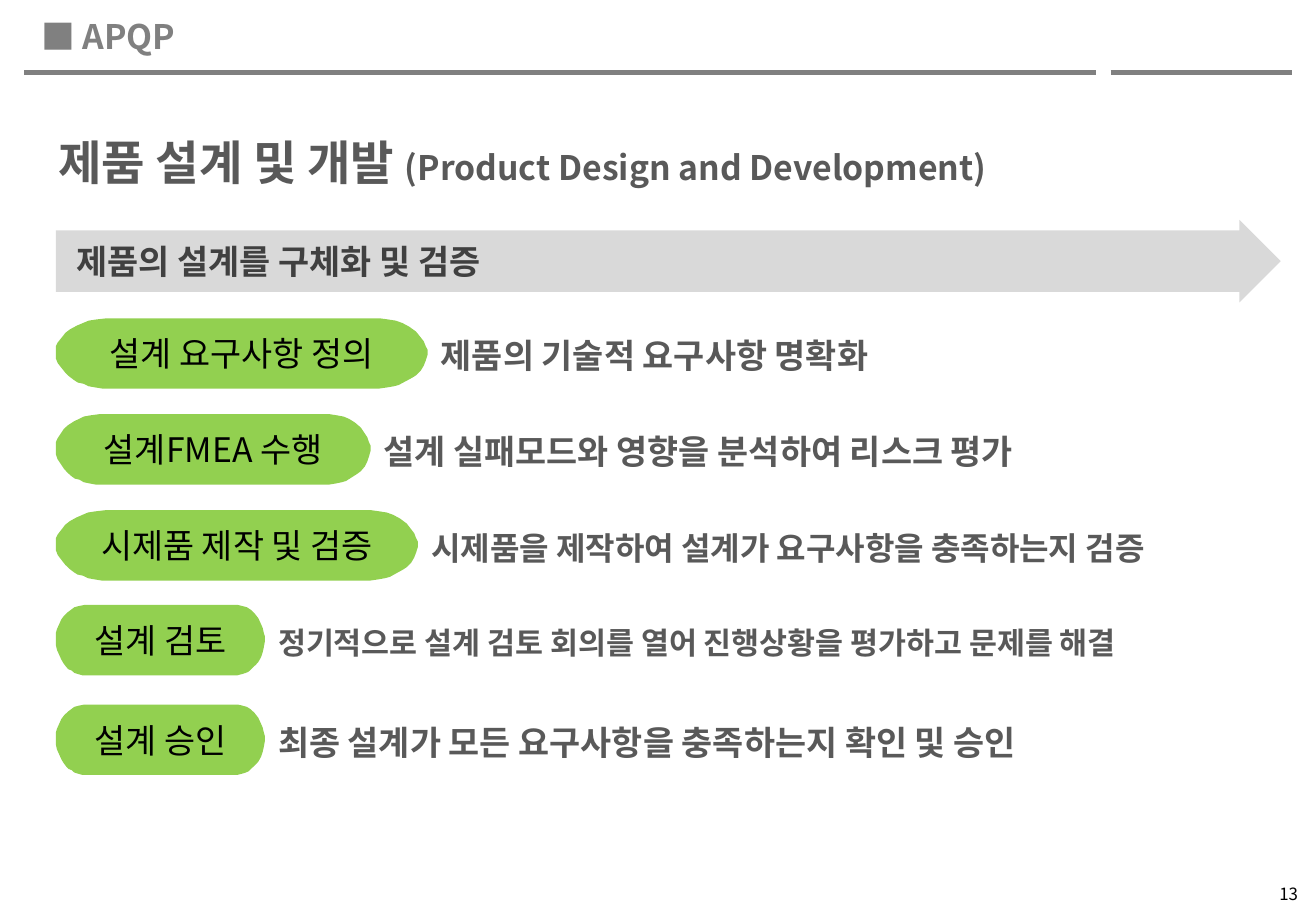
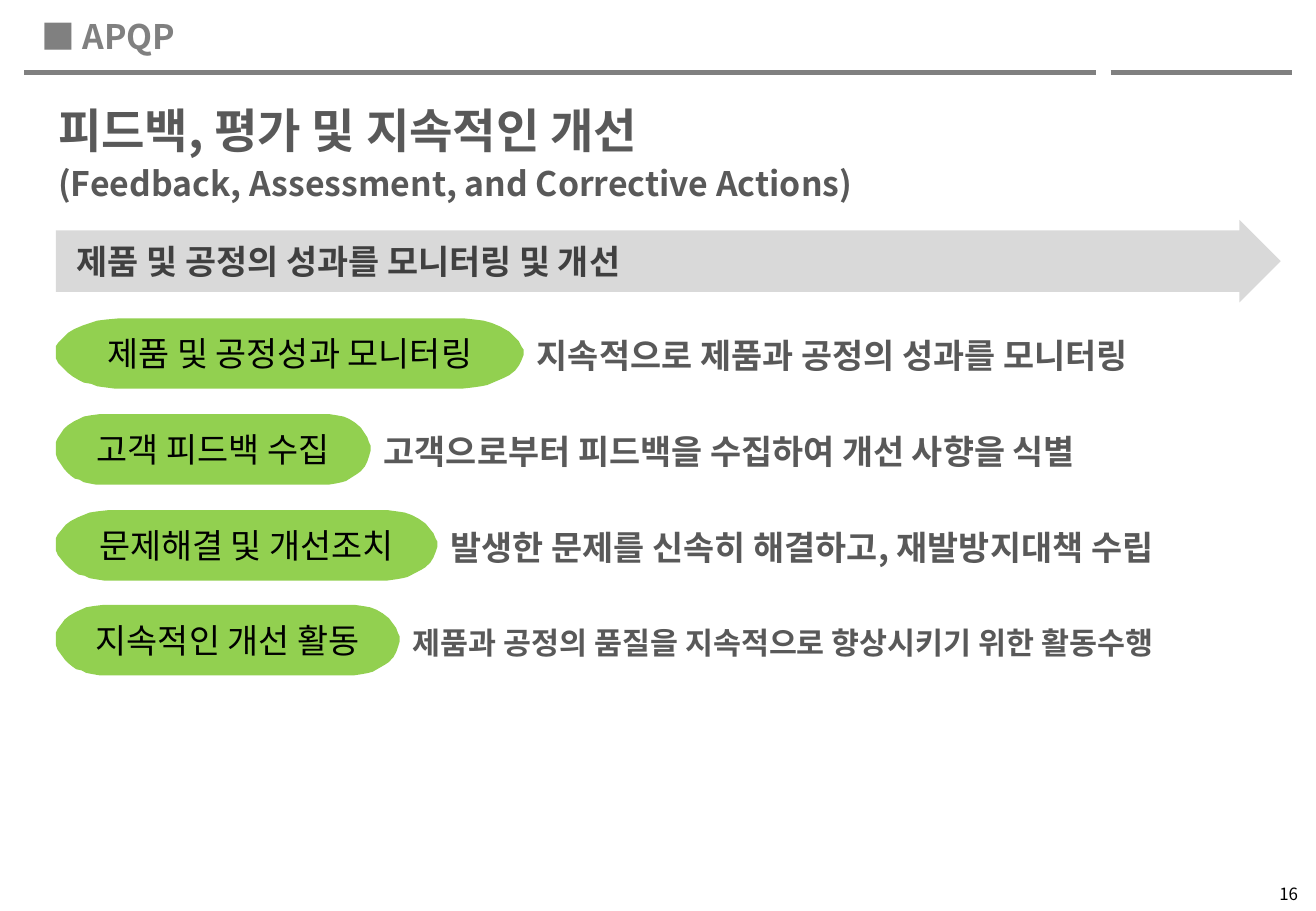
from lxml.etree import SubElement
from pptx import Presentation
from pptx.dml.color import RGBColor
from pptx.enum.shapes import MSO_CONNECTOR, MSO_SHAPE
from pptx.enum.text import MSO_ANCHOR, PP_ALIGN
from pptx.oxml.ns import qn
from pptx.util import Pt

RECT, ARROW = MSO_SHAPE.RECTANGLE, MSO_SHAPE.RIGHT_ARROW
LINE = MSO_CONNECTOR.STRAIGHT
TOP, MID = MSO_ANCHOR.TOP, MSO_ANCHOR.MIDDLE
LEFT, MIDDLE, RIGHT = PP_ALIGN.LEFT, PP_ALIGN.CENTER, PP_ALIGN.RIGHT

PX = 9144
COLORS = {
    "white": "FFFFFF", "black": "000000", "gray": "808080",
    "band": "D9D9D9", "dark": "404040", "text": "595959", "green": "92D050",
}
KR, JP = "Noto Sans CJK KR", "Noto Sans CJK JP"

PILL_W, PILL_H = 385, 58
PILL = [
    (53, 0), (335, 0), (344, 1), (352, 2), (359, 4), (366, 7), (373, 11),
    (377, 15), (381, 19), (383, 23), (385, 26), (385, 30), (383, 35),
    (381, 39), (378, 43), (373, 47), (369, 49), (362, 52), (355, 55),
    (350, 56), (343, 57), (334, 58), (49, 58), (41, 57), (34, 56),
    (29, 54), (23, 53), (19, 51), (14, 48), (10, 45), (6, 41), (2, 37),
    (0, 33), (0, 29), (0, 23), (2, 20), (6, 16), (10, 12), (15, 9),
    (22, 6), (28, 4), (34, 2), (42, 1),
]
TOPS = [262, 341, 420, 498, 580]

SLIDES = [
    {
        "page": "13",
        "title": (110, 57, [[("제품 설계 및 개발 ", 28),
                             ("(Product Design and Development)", 20)]]),
        "goal": "제품의 설계를 구체화 및 검증",
        "rows": [
            ("설계 요구사항 정의", 306, "제품의 기술적 요구사항 명확화", 701, 20),
            ("설계FMEA 수행", 259, "설계 실패모드와 영향을 분석하여 리스크 평가", 732, 20),
            ("시제품 제작 및 검증", 298,
             "시제품을 제작하여 설계가 요구사항을 충족하는지 검증", 685, 19),
            ("설계 검토", 172,
             "정기적으로 설계 검토 회의를 열어 진행상황을 평가하고 문제를 해결", 811, 18),
            ("설계 승인", 172,
             "최종 설계가 모든 요구사항을 충족하는지 확인 및 승인", 811, 20),
        ],
    },
    {
        "page": "16",
        "title": (84, 98, [[("피드백, 평가 및 지속적인 개선", 28)],
                           [("(Feedback, Assessment, and Corrective Actions)", 20)]]),
        "goal": "제품 및 공정의 성과를 모니터링 및 개선",
        "rows": [
            ("제품 및 공정성과 모니터링", 385,
             "지속적으로 제품과 공정의 성과를 모니터링", 622, 20),
            ("고객 피드백 수집", 259,
             "고객으로부터 피드백을 수집하여 개선 사향을 식별", 732, 20),
            ("문제해결 및 개선조치", 314,
             "발생한 문제를 신속히 해결하고, 재발방지대책 수립", 669, 20),
            ("지속적인 개선 활동", 283,
             "제품과 공정의 품질을 지속적으로 향상시키기 위한 활동수행", 701, 18),
        ],
    },
]


def color(name):
    return RGBColor.from_string(COLORS[name])


def scale(*sizes):
    return [round(size * PX) for size in sizes]


def paint(shape, fill):
    shape.shadow.inherit = False
    shape.fill.solid()
    shape.fill.fore_color.rgb = color(fill)
    shape.line.fill.background()


def write(shape, paras, ink, face=KR, bold=False, align=LEFT, anchor=MID, space=1.0):
    frame = shape.text_frame
    frame.word_wrap = True
    frame.vertical_anchor = anchor
    for i, runs in enumerate(paras):
        para = frame.add_paragraph() if i else frame.paragraphs[0]
        para.alignment = align
        para.line_spacing = space
        if i:
            para.space_before = Pt(5)
        for text, size in runs:
            run = para.add_run()
            run.text = text
            font = run.font
            font.size, font.bold = Pt(size), bold
            font.color.rgb = color(ink)
            font.name = face
            SubElement(run._r.get_or_add_rPr(), qn("a:ea"), typeface=face)


def add_text(slide, box, paras, ink, **style):
    write(slide.shapes.add_textbox(*scale(*box)), paras, ink, **style)


def add_rule(slide, left, right, top):
    rule = slide.shapes.add_connector(LINE, *scale(left, top, right, top))
    rule.line.color.rgb = color("gray")
    rule.line.width = Pt(3)
    SubElement(rule._element.spPr, qn("a:effectLst"))


def add_frame(slide, page):
    add_rule(slide, 20, 902, 60)
    add_rule(slide, 914, 1063, 60)
    add_text(slide, (983, 721, 95, 30), [[(page, 10)]], "black", align=RIGHT)
    add_text(slide, (24, 8, 817, 44), [[("■ APQP", 20)]], "gray",
             bold=True, anchor=TOP)


def add_goal(slide, box, text):
    arrow = slide.shapes.add_shape(ARROW, *scale(*box))
    arrow.adjustments[0], arrow.adjustments[1] = 0.745, 0.5
    paint(arrow, "band")
    arrow.text_frame.margin_left = 17 * PX
    write(arrow, [[(text, 20)]], "dark", bold=True)


def add_pill(slide, box, text):
    left, top, wide, high = box
    spots = [scale(left + x * wide / PILL_W, top + y * high / PILL_H)
             for x, y in PILL]
    form = slide.shapes.build_freeform(*spots[0])
    form.add_line_segments(spots[1:], close=True)
    pill = form.convert_to_shape()
    paint(pill, "green")
    write(pill, [[(text, 20)]], "black", align=MIDDLE)


def add_row(slide, left, top, row):
    label, wide, text, span, size = row
    note = slide.shapes.add_shape(RECT, *scale(left + wide + 1, top + 3, span, 55))
    paint(note, "white")
    write(note, [[(text, size)]], "text", face=JP, bold=True)
    add_pill(slide, (left, top, wide, PILL_H), label)


def add_page(deck, data):
    slide = deck.slides.add_slide(deck.slide_layouts[6])
    add_frame(slide, data["page"])
    top, high, paras = data["title"]
    add_text(slide, (38, top, 1008, high), paras, "text", face=JP,
             bold=True, anchor=TOP, space=0.9)
    add_goal(slide, (46, 181, 1008, 68), data["goal"])
    for top, row in zip(TOPS, data["rows"]):
        add_row(slide, 46, top, row)


def main():
    deck = Presentation()
    deck.slide_width, deck.slide_height = scale(1083, 750)
    for data in SLIDES:
        add_page(deck, data)
    deck.save("out.pptx")


if __name__ == "__main__":
    main()
